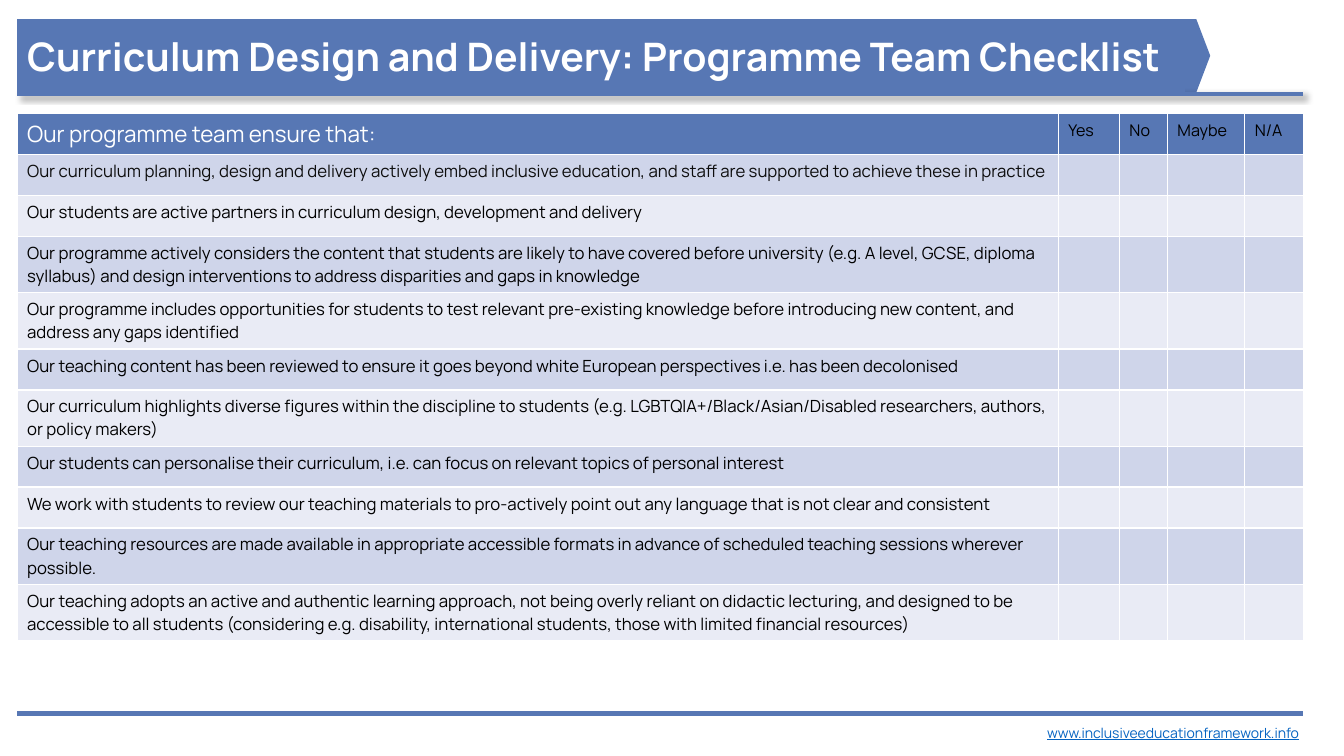
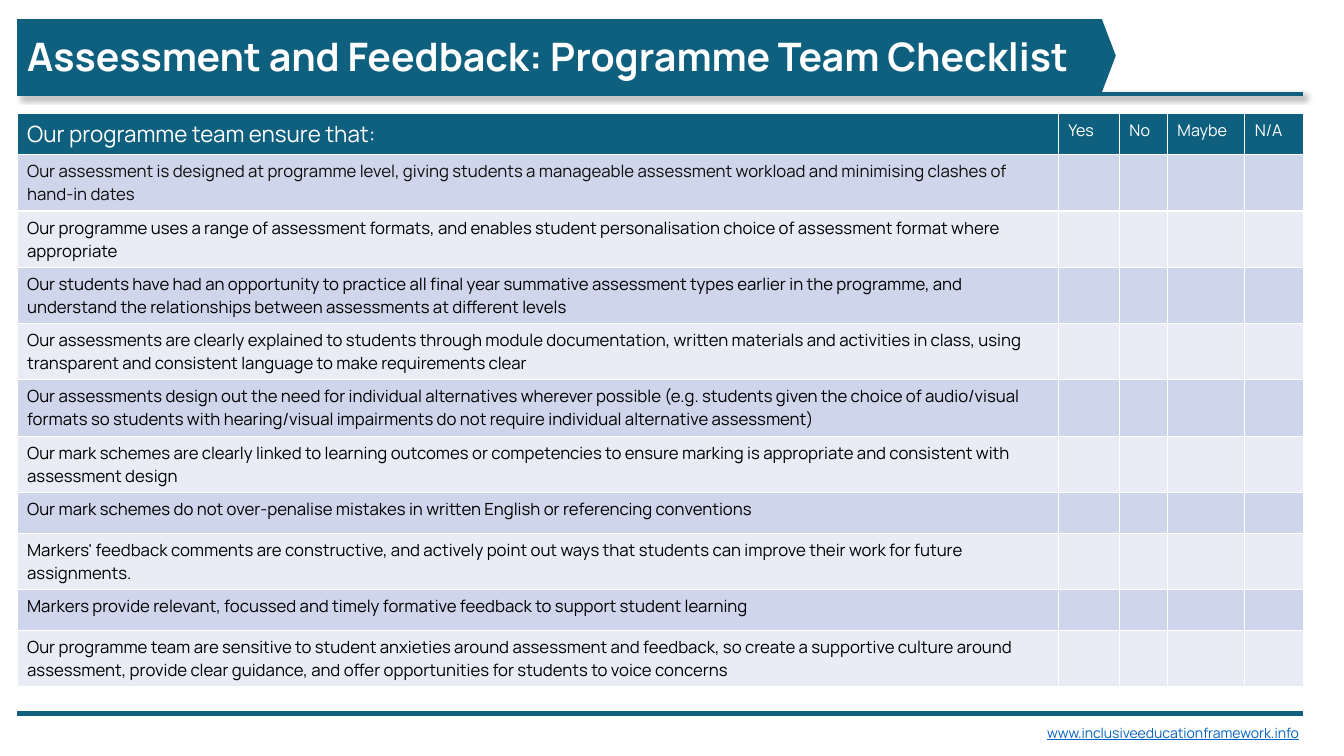
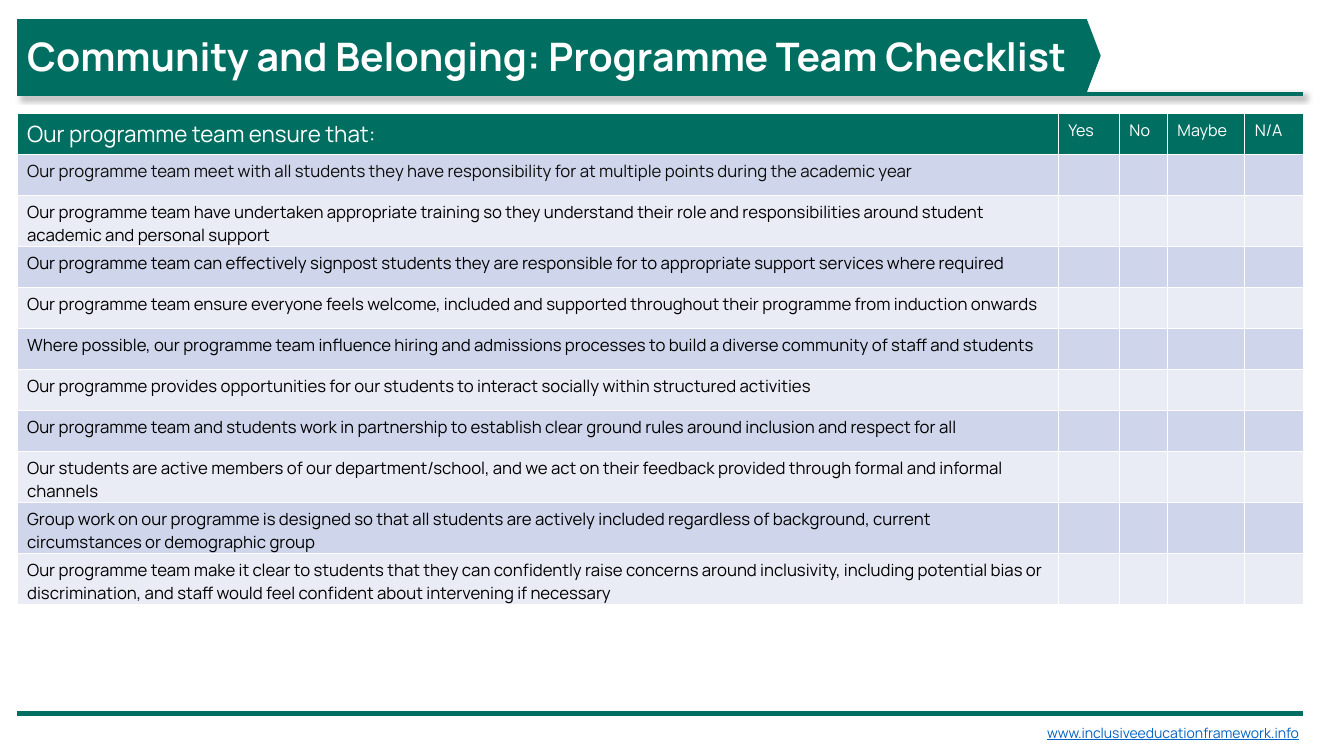
from lxml.etree import SubElement
from pptx import Presentation
from pptx.dml.color import RGBColor
from pptx.enum.shapes import MSO_CONNECTOR, MSO_SHAPE
from pptx.enum.text import MSO_ANCHOR, MSO_AUTO_SIZE, PP_ALIGN
from pptx.oxml.ns import qn
from pptx.util import Cm, Pt

FACE = "Manrope"
WHITE, BLACK, INK, BLUE = "FFFFFF", "000000", "0D0D0D", "0563C1"
BANDS = ("CFD5EA", "E9EBF5")
LEFT, WIDTH = 0.43, 32.41
COLS = (26.24, 1.54, 1.21, 1.95, 1.47)
ROW = 1.03
HEAD = ("Our programme team ensure that:", "Yes", "No", "Maybe", "N/A")
LINK = "www.inclusiveeducationframework.info"

# "end" is the right edge of the title bar, "tip" that of its arrow point.
SLIDES = [
    dict(
        title="Curriculum Design and Delivery: Programme Team Checklist",
        hue="5777B4", end=29.87, tip=30.5, answer=BLACK, foot=0.13,
        items=[
            "Our curriculum planning, design and delivery actively embed inclusive education, and staff are supported to achieve these in practice",
            "Our students are active partners in curriculum design, development and delivery",
            "Our programme actively considers the content that students are likely to have covered before university (e.g. A level, GCSE, diploma syllabus) and design interventions to address disparities and gaps in knowledge",
            "Our programme includes opportunities for students to test relevant pre-existing knowledge before introducing new content, and address any gaps identified",
            "Our teaching content has been reviewed to ensure it goes beyond white European perspectives i.e. has been decolonised",
            "Our curriculum highlights diverse figures within the discipline to students (e.g. LGBTQIA+/Black/Asian/Disabled researchers, authors, or policy makers)",
            "Our students can personalise their curriculum, i.e. can focus on relevant topics of personal interest",
            "We work with students to review our teaching materials to pro-actively point out any language that is not clear and consistent",
            "Our teaching resources are made available in appropriate accessible formats in advance of scheduled teaching sessions wherever possible.",
            "Our teaching adopts an active and authentic learning approach, not being overly reliant on didactic lecturing, and designed to be accessible to all students (considering e.g. disability, international students, those with limited financial resources)",
        ],
    ),
    dict(
        title="Assessment and Feedback: Programme Team Checklist",
        hue="0F607E", end=27.58, tip=28.12, answer=WHITE, foot=0.13,
        items=[
            "Our assessment is designed at programme level, giving students a manageable assessment workload and minimising clashes of hand-in dates",
            "Our programme uses a range of assessment formats, and enables student personalisation choice of assessment format where appropriate",
            "Our students have had an opportunity to practice all final year summative assessment types earlier in the programme, and understand the relationships between assessments at different levels",
            "Our assessments are clearly explained to students through module documentation, written materials and activities in class, using transparent and consistent language to make requirements clear",
            "Our assessments design out the need for individual alternatives wherever possible (e.g. students given the choice of audio/visual formats so students with hearing/visual impairments do not require individual alternative assessment)",
            "Our mark schemes are clearly linked to learning outcomes or competencies to ensure marking is appropriate and consistent with assessment design",
            "Our mark schemes do not over-penalise mistakes in written English or referencing conventions",
            "Markers' feedback comments are constructive, and actively point out ways that students can improve their work for future assignments.",
            "Markers provide relevant, focussed and timely formative feedback to support student learning",
            "Our programme team are sensitive to student anxieties around assessment and feedback, so create a supportive culture around assessment, provide clear guidance, and offer opportunities for students to voice concerns",
        ],
    ),
    dict(
        title="Community and Belonging: Programme Team Checklist",
        hue="006E61", end=27.3, tip=27.74, answer=WHITE, foot=0,
        items=[
            "Our programme team meet with all students they have responsibility for at multiple points during the academic year",
            "Our programme team have undertaken appropriate training so they understand their role and responsibilities around student academic and personal support",
            "Our programme team can effectively signpost students they are responsible for to appropriate support services where required",
            "Our programme team ensure everyone feels welcome, included and supported throughout their programme from induction onwards",
            "Where possible, our programme team influence hiring and admissions processes to build a diverse community of staff and students",
            "Our programme provides opportunities for our students to interact socially within structured activities",
            "Our programme team and students work in partnership to establish clear ground rules around inclusion and respect for all",
            "Our students are active members of our department/school, and we act on their feedback provided through formal and informal channels",
            "Group work on our programme is designed so that all students are actively included regardless of background, current circumstances or demographic group",
            "Our programme team make it clear to students that they can confidently raise concerns around inclusivity, including potential bias or discrimination, and staff would feel confident about intervening if necessary",
        ],
    ),
]


def paint(part, hue):
    """Give a fill a solid colour."""
    part.solid()
    part.fore_color.rgb = RGBColor.from_string(hue)


def assign(thing, **values):
    for name, value in values.items():
        setattr(thing, name, value)


def write(frame, text, size, hue, **values):
    line = frame.paragraphs[0]
    line.alignment = PP_ALIGN.LEFT
    run = line.add_run()
    run.text = text
    assign(run.font, name=FACE, size=Pt(size), **values)
    run.font.color.rgb = RGBColor.from_string(hue)


def rule(slide, left, top, width, hue, shade=False):
    """Draw a level line, with a soft shadow if asked."""
    line = slide.shapes.add_connector(
        MSO_CONNECTOR.STRAIGHT, Cm(left), Cm(top), Cm(left + width), Cm(top))
    line.line.width = Pt(3)
    paint(line.line.fill, hue)
    effect = SubElement(line.element.spPr, qn("a:effectLst"))
    if shade:
        cast = SubElement(effect, qn("a:outerShdw"), blurRad=str(Pt(4)),
                          dist=str(Pt(3)), dir="2700000", algn="tl",
                          rotWithShape="0")
        tone = SubElement(cast, qn("a:srgbClr"), val=BLACK)
        SubElement(tone, qn("a:alpha"), val="40000")


def banner(slide, left, top, width, data):
    hue, high, nose = data["hue"], 1.85, 4.8
    point = slide.shapes.add_shape(
        MSO_SHAPE.PENTAGON, Cm(data["tip"] - nose), Cm(top),
        Cm(nose), Cm(high))
    point.adjustments[0] = 0.19
    point.shadow.inherit = False
    paint(point.fill, hue)
    point.line.fill.background()
    rule(slide, left, top + 1.88, width, hue, shade=True)

    title = slide.shapes.title
    slide.shapes.element.append(title.element)  # in front of the arrow point
    assign(title, left=Cm(left), top=Cm(top),
           width=Cm(data["end"] - left), height=Cm(high))
    paint(title.fill, hue)
    assign(title.text_frame, word_wrap=True, auto_size=MSO_AUTO_SIZE.NONE,
           vertical_anchor=MSO_ANCHOR.MIDDLE)
    write(title.text_frame, data["title"], 28, WHITE, bold=True)


def checklist(slide, left, top, width, data):
    items = data["items"]
    count = len(items) + 1
    table = slide.shapes.add_table(
        count, len(COLS), Cm(left), Cm(top), Cm(width), Cm(ROW * count)).table
    for col, wide in zip(table.columns, COLS):
        col.width = Cm(wide)
    for row in table.rows:
        row.height = Cm(ROW)

    for spot, text in enumerate(HEAD):
        cell = table.cell(0, spot)
        paint(cell.fill, data["hue"])
        size, hue = (11.5, data["answer"]) if spot else (16, WHITE)
        write(cell.text_frame, text, size, hue, bold=False)

    for place, text in enumerate(items, 1):
        for cell in table.rows[place].cells:
            paint(cell.fill, BANDS[(place - 1) % 2])
        first = table.cell(place, 0)
        first.margin_bottom = Cm(data["foot"])
        write(first.text_frame, text, 12, INK if place == 1 else BLACK)


def footer(slide, left, top, width, hue):
    rule(slide, left, top, width, hue)
    box = slide.shapes.add_textbox(
        Cm(left + width - 6.7), Cm(top + 0.16), Cm(7.11), Cm(0.69))
    box.text_frame.word_wrap = True
    write(box.text_frame, LINK, 10, BLUE, underline=True)


def main():
    deck = Presentation()
    assign(deck, slide_width=Cm(33.87), slide_height=Cm(19.05))
    for data in SLIDES:
        slide = deck.slides.add_slide(deck.slide_layouts[5])
        banner(slide, LEFT, 0.48, WIDTH, data)
        checklist(slide, LEFT, 2.87, WIDTH, data)
        footer(slide, LEFT, 17.98, WIDTH, data["hue"])
    deck.save("out.pptx")


if __name__ == "__main__":
    main()
